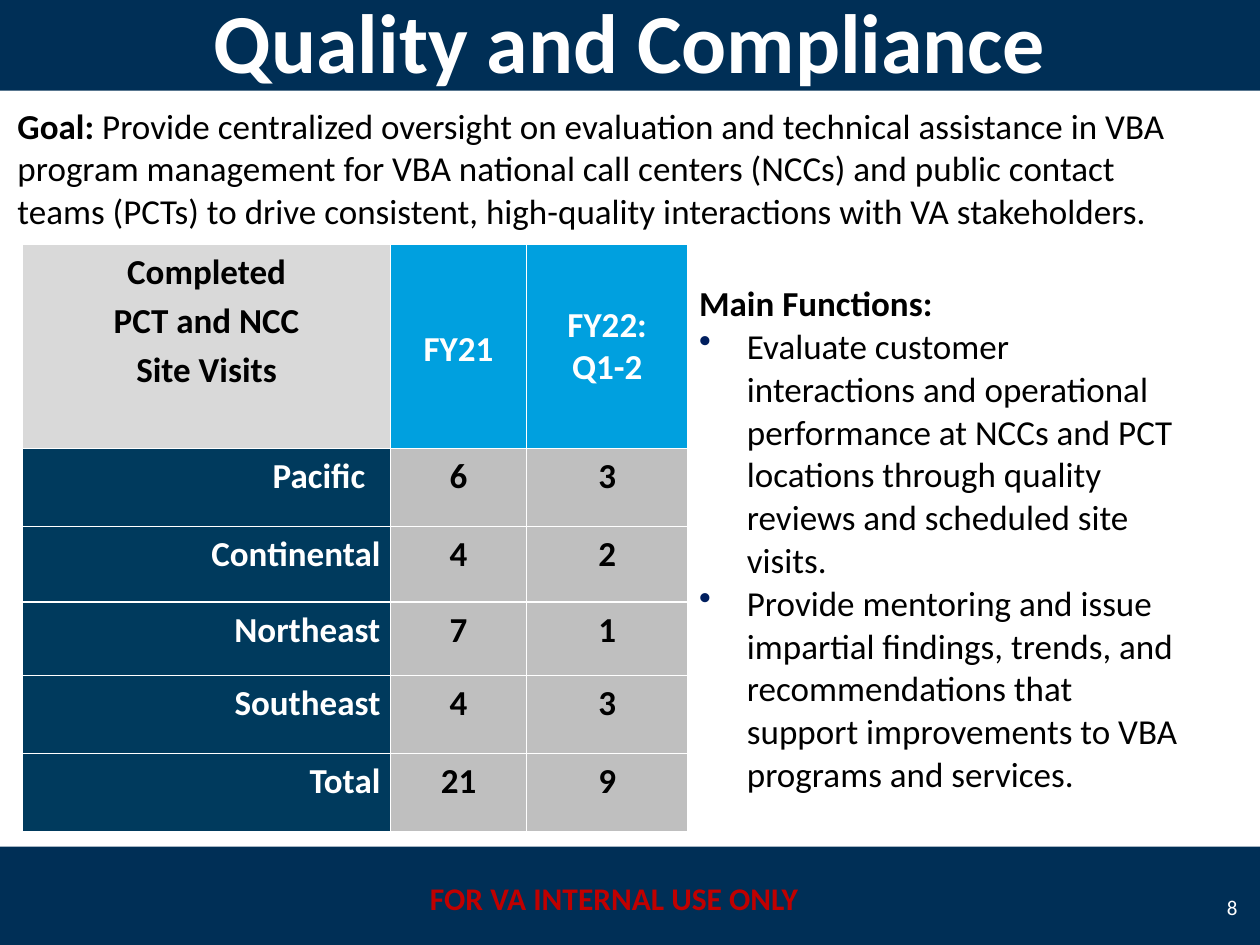
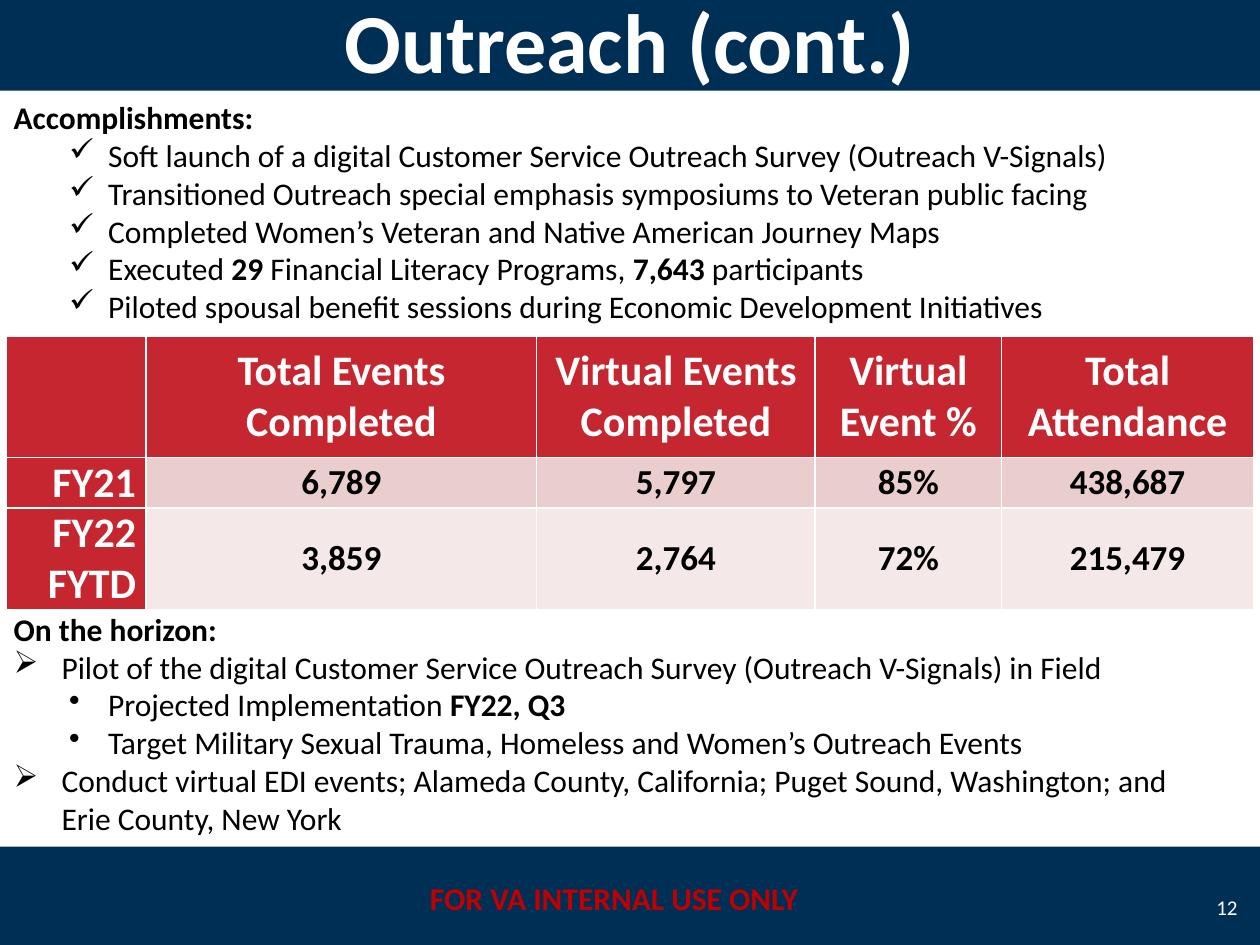
from lxml import etree
from pptx import Presentation
from pptx.dml.color import RGBColor
from pptx.enum.shapes import MSO_SHAPE
from pptx.enum.text import MSO_ANCHOR, PP_ALIGN
from pptx.oxml.ns import qn
from pptx.util import Inches, Pt

RECTANGLE = MSO_SHAPE.RECTANGLE
TOP, MIDDLE = MSO_ANCHOR.TOP, MSO_ANCHOR.MIDDLE
LEFT, CENTER, RIGHT = PP_ALIGN.LEFT, PP_ALIGN.CENTER, PP_ALIGN.RIGHT

FONT = "Calibri"
NAVY = RGBColor(0x00, 0x2F, 0x56)
WHITE = RGBColor(0xFF, 0xFF, 0xFF)
BLACK = RGBColor(0x00, 0x00, 0x00)
FOOTER_RED = RGBColor(0xC0, 0x00, 0x00)
BULLET_BLUE = RGBColor(0x00, 0x1F, 0x5F)
LABEL_NAVY = RGBColor(0x00, 0x3A, 0x5D)
HEADER_BLUE = RGBColor(0x00, 0xA0, 0xDF)
CORNER_GRAY = RGBColor(0xD9, 0xD9, 0xD9)
VALUE_GRAY = RGBColor(0xBF, 0xBF, 0xBF)
TABLE_RED = RGBColor(0xC6, 0x26, 0x30)
ROSE = RGBColor(0xEA, 0xCD, 0xCD)
PALE_ROSE = RGBColor(0xF5, 0xE8, 0xE8)

TITLE_BAND = (0, -0.08, 10, 0.8)
FOOTER_BAND = (0, 6.72, 10, 0.8)
FOOTER_TEXT = "FOR VA INTERNAL USE ONLY"

BULLETS = {
    "dot": ("•", 0.38, 0.38, BULLET_BLUE),
    "check": ("✓", 0.75, 0.31, BLACK),
    "arrow": ("➢", 0.38, 0.38, BLACK),
    "subdot": ("•", 0.75, 0.31, BLACK),
}

# Asterisks enclose bold words.
GOAL = [
    ("", "*Goal: *Provide centralized oversight on evaluation and technical assistance in VBA "
         "program management for VBA national call centers (NCCs) and public contact teams (PCTs) "
         "to drive consistent, high-quality interactions with VA stakeholders."),
]
FUNCTIONS = [
    ("", "*Main Functions:*"),
    ("dot", "Evaluate customer interactions and operational performance at NCCs and PCT "
            "locations through quality reviews and scheduled site visits."),
    ("dot", "Provide mentoring and issue impartial findings, trends, and recommendations that "
            "support improvements to VBA programs and services."),
]
SITE_VISITS = [
    ("Completed\nPCT and NCC\nSite Visits", "FY21", "FY22:\nQ1-2"),
    ("Pacific", "6", "3"),
    ("Continental", "4", "2"),
    ("Northeast", "7", "1"),
    ("Southeast", "4", "3"),
    ("Total", "21", "9"),
]
ACCOMPLISHMENTS = [
    ("", "*Accomplishments:*"),
    ("check", "Soft launch of a digital Customer Service Outreach Survey (Outreach V-Signals)"),
    ("check", "Transitioned Outreach special emphasis symposiums to Veteran public facing"),
    ("check", "Completed Women’s Veteran and Native American Journey Maps"),
    ("check", "Executed *29 *Financial Literacy Programs, *7,643* participants"),
    ("check", "Piloted spousal benefit sessions during Economic Development Initiatives"),
]
HORIZON = [
    ("", "*On the horizon:*"),
    ("arrow", "Pilot of the digital Customer Service Outreach Survey (Outreach V-Signals) in Field"),
    ("subdot", "Projected Implementation *FY22, Q3*"),
    ("subdot", "Target Military Sexual Trauma, Homeless and Women’s Outreach Events"),
    ("arrow", "Conduct virtual EDI events; Alameda County, California; Puget Sound, Washington; "
              "and Erie County, New York"),
]
EVENTS = [
    ("", "Total Events Completed", "Virtual Events Completed", "Virtual Event %", "Total Attendance"),
    ("FY21", "6,789", "5,797", "85%", "438,687"),
    ("FY22 FYTD", "3,859", "2,764", "72%", "215,479"),
]


def style(font, size, color, bold=False):
    font.name, font.size, font.bold = FONT, Pt(size), bold
    font.color.rgb = color


def place(shape, area):
    shape.left, shape.top, shape.width, shape.height = map(Inches, area)


def format_frame(frame, size, color, align, bold=False, anchor=MIDDLE):
    frame.word_wrap = True
    frame.vertical_anchor = anchor
    for para in frame.paragraphs:
        para.alignment = align
        for span in para.runs:
            style(span.font, size, color, bold)


def add_label(page, area, text, size, color, align, bold=False, anchor=MIDDLE):
    box = page.shapes.add_textbox(*map(Inches, area))
    box.text_frame.text = text
    format_frame(box.text_frame, size, color, align, bold, anchor)


def add_band(page, area):
    band = page.shapes.add_shape(RECTANGLE, *map(Inches, area))
    band.shadow.inherit = False
    band.fill.solid()
    band.fill.fore_color.rgb = NAVY
    band.line.fill.background()
    page.shapes.title.element.addprevious(band.element)


def add_page(deck, title, number):
    page = deck.slides.add_slide(deck.slide_layouts[5])
    add_band(page, FOOTER_BAND)
    add_band(page, TITLE_BAND)
    place(page.shapes.title, TITLE_BAND)
    page.shapes.title.text_frame.text = title
    format_frame(page.shapes.title.text_frame, 48, WHITE, CENTER, True)
    add_label(page, (3.25, 6.93, 3.25, 0.4), FOOTER_TEXT, 18, FOOTER_RED, CENTER, True, TOP)
    add_label(page, (9.5, 7, 0.42, 0.4), number, 12, WHITE, RIGHT)
    return page


def add_bullet(para, kind):
    mark, margin, hanging, color = BULLETS[kind]
    properties = para._p.get_or_add_pPr()
    properties.set("marL", str(Inches(margin)))
    properties.set("indent", str(-Inches(hanging)))
    bullet_color = etree.SubElement(properties, qn("a:buClr"))
    etree.SubElement(bullet_color, qn("a:srgbClr")).set("val", str(color))
    etree.SubElement(properties, qn("a:buChar")).set("char", mark)


def add_text(page, area, content, size, margin_right, spacing=1.0):
    box = page.shapes.add_textbox(*map(Inches, area))
    frame = box.text_frame
    frame.word_wrap = True
    frame.margin_right = Inches(margin_right)
    for index, (kind, text) in enumerate(content):
        para = frame.add_paragraph() if index else frame.paragraphs[0]
        para.alignment = LEFT
        para.line_spacing = spacing
        if kind:
            add_bullet(para, kind)
        for position, piece in enumerate(text.split("*")):
            if piece:
                span = para.add_run()
                span.text = piece
                style(span.font, size, BLACK, position % 2 == 1)


def add_grid(page, left, top, widths, heights, rows, look):
    frame = page.shapes.add_table(len(rows), len(widths), Inches(left), Inches(top),
                                  Inches(sum(widths)), Inches(sum(heights)))
    table = frame.table
    table.horz_banding = False
    for column, width in zip(table.columns, widths):
        column.width = Inches(width)
    for row, height in zip(table.rows, heights):
        row.height = Inches(height)
    for r, values in enumerate(rows):
        for c, value in enumerate(values):
            fill, color, size, anchor = look(r, c)
            cell = table.cell(r, c)
            cell.fill.solid()
            cell.fill.fore_color.rgb = fill
            cell.margin_left = cell.margin_right = Inches(0.08)
            cell.margin_top = cell.margin_bottom = 0
            cell.text_frame.text = value
            align = RIGHT if r and not c else CENTER
            format_frame(cell.text_frame, size, color, align, True)
            cell.vertical_anchor = anchor
    return table


def site_visit_look(r, c):
    if r == 0:
        return (HEADER_BLUE, WHITE, 20, MIDDLE) if c else (CORNER_GRAY, BLACK, 20, TOP)
    return (VALUE_GRAY, BLACK, 20, TOP) if c else (LABEL_NAVY, WHITE, 20, TOP)


def event_look(r, c):
    if r and c:
        return (ROSE, PALE_ROSE)[r - 1], BLACK, 20, MIDDLE
    return TABLE_RED, WHITE, 24, TOP if r else MIDDLE


def build_quality(deck):
    page = add_page(deck, "Quality and Compliance", "8")
    add_text(page, (0.04, 0.77, 9.92, 1.12), GOAL, 20, 0.57, 1.02)
    table = add_grid(page, 0.18, 1.94, (2.92, 1.08, 1.28),
                     (1.62, 0.62, 0.6, 0.58, 0.62, 0.62), SITE_VISITS, site_visit_look)
    for cell in table.iter_cells():
        for para in cell.text_frame.paragraphs:
            para.line_spacing = 1.15
    for para in table.cell(0, 2).text_frame.paragraphs:
        para.line_spacing = 1.0
    table.cell(1, 0).margin_right = Inches(0.2)
    add_text(page, (5.45, 2.18, 4.37, 4.21), FUNCTIONS, 20, 0.44, 1.02)


def build_outreach(deck):
    page = add_page(deck, "Outreach (cont.)", "12")
    add_text(page, (0.01, 0.73, 9.99, 1.95), ACCOMPLISHMENTS, 18, 0.3)
    add_grid(page, 0.05, 2.67, (1.11, 3.1, 2.21, 1.48, 2), (0.96, 0.4, 0.81), EVENTS, event_look)
    add_text(page, (0.01, 4.79, 9.99, 1.93), HORIZON, 18, 0.3)


def main():
    deck = Presentation()
    deck.slide_width, deck.slide_height = Inches(10), Inches(7.5)
    build_quality(deck)
    build_outreach(deck)
    deck.save("out.pptx")


if __name__ == "__main__":
    main()
